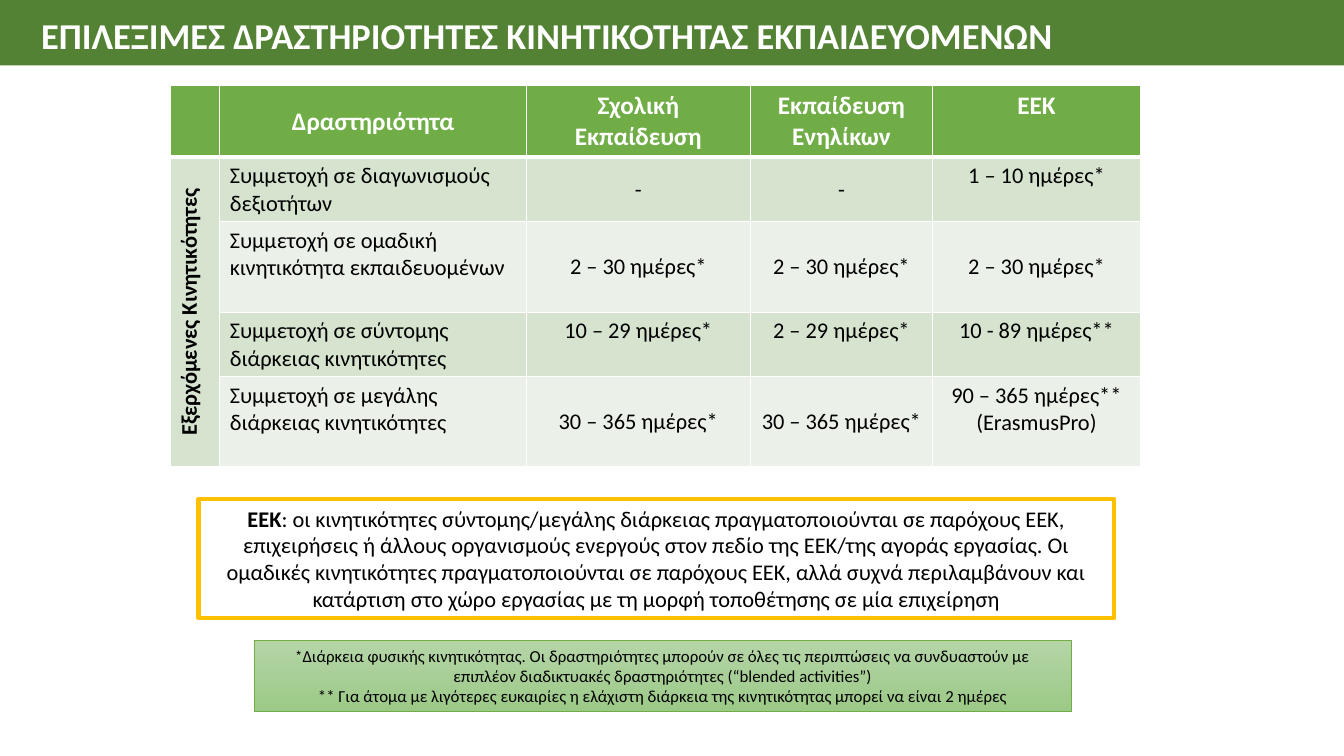
from lxml.etree import SubElement
from pptx import Presentation
from pptx.dml.color import RGBColor
from pptx.enum.shapes import MSO_SHAPE
from pptx.enum.text import MSO_ANCHOR, MSO_AUTO_SIZE, PP_ALIGN
from pptx.oxml.ns import qn
from pptx.util import Inches, Pt

WIDTH, HEIGHT = Inches(13.33), Inches(7.5)
COLOURS = {
    "banner": "548235", "header": "70AD47", "band": "D5E3CF", "plain": "EBF1E9",
    "frame": "FFC000", "note_top": "B5D5A7", "note_bottom": "9CC987",
    "white": "FFFFFF", "black": "000000",
}
MIDDLE, TOP = MSO_ANCHOR.MIDDLE, MSO_ANCHOR.TOP

# Column widths and row heights in percent of the slide
COLUMNS = [3.68, 22.81, 16.65, 13.58, 15.45]
ROWS = [9.47, 8.53, 12, 8.53, 11.87]

HEADINGS = ["", "Δραστηριότητα", "Σχολική Εκπαίδευση", "Εκπαίδευση\nΕνηλίκων", "ΕΕΚ"]
DIRECTION = "Εξερχόμενες Κινητικότητες"
ACTIVITIES = [
    ["Συμμετοχή σε διαγωνισμούς δεξιοτήτων", "-", "-", "1 – 10 ημέρες*"],
    ["Συμμετοχή σε ομαδική κινητικότητα εκπαιδευομένων",
     "2 – 30 ημέρες*", "2 – 30 ημέρες*", "2 – 30 ημέρες*"],
    ["Συμμετοχή σε σύντομης διάρκειας κινητικότητες",
     "10 – 29 ημέρες*", "2 – 29 ημέρες*", "10 - 89 ημέρες**"],
    ["Συμμετοχή σε μεγάλης διάρκειας κινητικότητες",
     "30 – 365 ημέρες*", "30 – 365 ημέρες*", "90 – 365 ημέρες**\n(ErasmusPro)"],
]
# Cells (row, column) whose text sits at the top
TOP_CELLS = {(0, 4), (1, 4), (3, 2), (3, 3), (3, 4), (4, 4)}


def colour(name):
    return RGBColor.from_string(COLOURS[name])


def across(percent):
    return round(WIDTH * percent / 100)


def down(percent):
    return round(HEIGHT * percent / 100)


def place(left, top, width, height):
    return across(left), down(top), across(width), down(height)


def set_font(font, size, ink="black", bold=False, name="Calibri"):
    font.name, font.size, font.bold = name, Pt(size), bold
    font.color.rgb = colour(ink)


def add_panel(slide, area, fill=None, line=None, line_width=1):
    panel = slide.shapes.add_shape(MSO_SHAPE.RECTANGLE, *place(*area))
    panel.shadow.inherit = False
    if fill:
        panel.fill.solid()
        panel.fill.fore_color.rgb = colour(fill)
    if line:
        panel.line.color.rgb = colour(line)
        panel.line.width = Pt(line_width)
    else:
        panel.line.fill.background()
    panel.text_frame.word_wrap = True
    return panel


def add_title(slide, text):
    title = slide.shapes.add_textbox(*place(2.33, 1.07, 77.5, 7.2)).text_frame
    title.word_wrap = False
    title.auto_size = MSO_AUTO_SIZE.SHAPE_TO_FIT_TEXT
    title.text = text
    set_font(title.paragraphs[0].font, 26, "white", bold=True)


def add_borders(cell, top=1, bottom=1):
    properties = cell._tc.get_or_add_tcPr()
    for side, width in (("lnL", 1), ("lnR", 1), ("lnT", top), ("lnB", bottom)):
        border = SubElement(properties, qn(f"a:{side}"), w=str(Pt(width)))
        SubElement(SubElement(border, qn("a:solidFill")), qn("a:srgbClr"),
                   val=COLOURS["white"])


def fill_cell(cell, text, fill, size, ink, bold, align, anchor):
    cell.fill.solid()
    cell.fill.fore_color.rgb = colour(fill)
    cell.vertical_anchor = anchor
    cell.text_frame.text = text
    for paragraph in cell.text_frame.paragraphs:
        paragraph.alignment = align
        set_font(paragraph.font, size, ink, bold)


def add_activity_table(slide):
    area = place(12.68, 11.33, sum(COLUMNS), sum(ROWS))
    table = slide.shapes.add_table(len(ROWS), len(COLUMNS), *area).table
    for column, width in zip(table.columns, COLUMNS):
        column.width = across(width)
    for row, height in zip(table.rows, ROWS):
        row.height = down(height)

    directions = [DIRECTION, "", "", ""]
    contents = [HEADINGS] + [[d, *a] for d, a in zip(directions, ACTIVITIES)]
    for r, texts in enumerate(contents):
        heading = r == 0
        fill = "header" if heading else "band" if r % 2 else "plain"
        for c, text in enumerate(texts):
            cell = table.cell(r, c)
            add_borders(cell, 3 if r == 1 else 1, 3 if heading else 1)
            activity = c == 1 and not heading
            fill_cell(
                cell, text, fill, 18 if heading else 16,
                "white" if heading else "black", heading or c == 0,
                PP_ALIGN.LEFT if activity else PP_ALIGN.CENTER,
                TOP if activity or (r, c) in TOP_CELLS else MIDDLE)

    # Direction label spans all activities and reads upwards
    label = table.cell(1, 0)
    label.merge(table.cell(len(ACTIVITIES), 0))
    label._tc.get_or_add_tcPr().set("vert", "vert270")


def add_centred_text(panel, paragraphs, size):
    """Each paragraph is a list of (text, bold, font name) runs."""
    frame = panel.text_frame
    for index, runs in enumerate(paragraphs):
        paragraph = frame.add_paragraph() if index else frame.paragraphs[0]
        paragraph.alignment = PP_ALIGN.CENTER
        for text, bold, name in runs:
            run = paragraph.add_run()
            run.text = text
            set_font(run.font, size, bold=bold, name=name)


def main():
    presentation = Presentation()
    presentation.slide_width, presentation.slide_height = WIDTH, HEIGHT
    slide = presentation.slides.add_slide(presentation.slide_layouts[6])

    # Banner and title
    add_panel(slide, (0, 0, 100, 8.67), "banner")
    add_title(slide, "ΕΠΙΛΕΞΙΜΕΣ ΔΡΑΣΤΗΡΙΟΤΗΤΕΣ ΚΙΝΗΤΙΚΟΤΗΤΑΣ ΕΚΠΑΙΔΕΥΟΜΕΝΩΝ")

    # Durations by activity and sector
    add_activity_table(slide)

    # Explanation of vocational training
    training = add_panel(slide, (14.78, 66, 68.12, 15.73), "white", "frame", 3)
    add_centred_text(training, [[
        ("ΕΕΚ", True, "Calibri"),
        (": οι κινητικότητες σύντομης/μεγάλης διάρκειας πραγματοποιούνται σε "
         "παρόχους ΕΕΚ, επιχειρήσεις ή άλλους οργανισμούς ενεργούς στον πεδίο της "
         "ΕΕΚ/της αγοράς εργασίας. Οι ομαδικές κινητικότητες πραγματοποιούνται σε "
         "παρόχους ΕΕΚ, αλλά συχνά περιλαμβάνουν και κατάρτιση στο χώρο εργασίας "
         "με τη μορφή τοποθέτησης σε μία επιχείρηση", False, "Calibri"),
    ]], 16)

    # Footnotes
    footnotes = add_panel(slide, (18.9, 84.67, 60.84, 9.47), line="header", line_width=0.5)
    footnotes.fill.gradient()
    footnotes.fill.gradient_angle = 270
    for stop, shade in zip(footnotes.fill.gradient_stops, ("note_top", "note_bottom")):
        stop.color.rgb = colour(shade)
    add_centred_text(footnotes, [
        [("*", False, "League Spartan"),
         ("Διάρκεια φυσικής κινητικότητας. Οι δραστηριότητες μπορούν σε όλες τις "
          "περιπτώσεις να συνδυαστούν με επιπλέον διαδικτυακές δραστηριότητες "
          "(“blended activities”)", False, "Calibri")],
        [("** Για άτομα με λιγότερες ευκαιρίες η ελάχιστη διάρκεια της "
          "κινητικότητας μπορεί να είναι 2 ημέρες", False, "Calibri")],
    ], 12)

    presentation.save("out.pptx")


if __name__ == "__main__":
    main()
